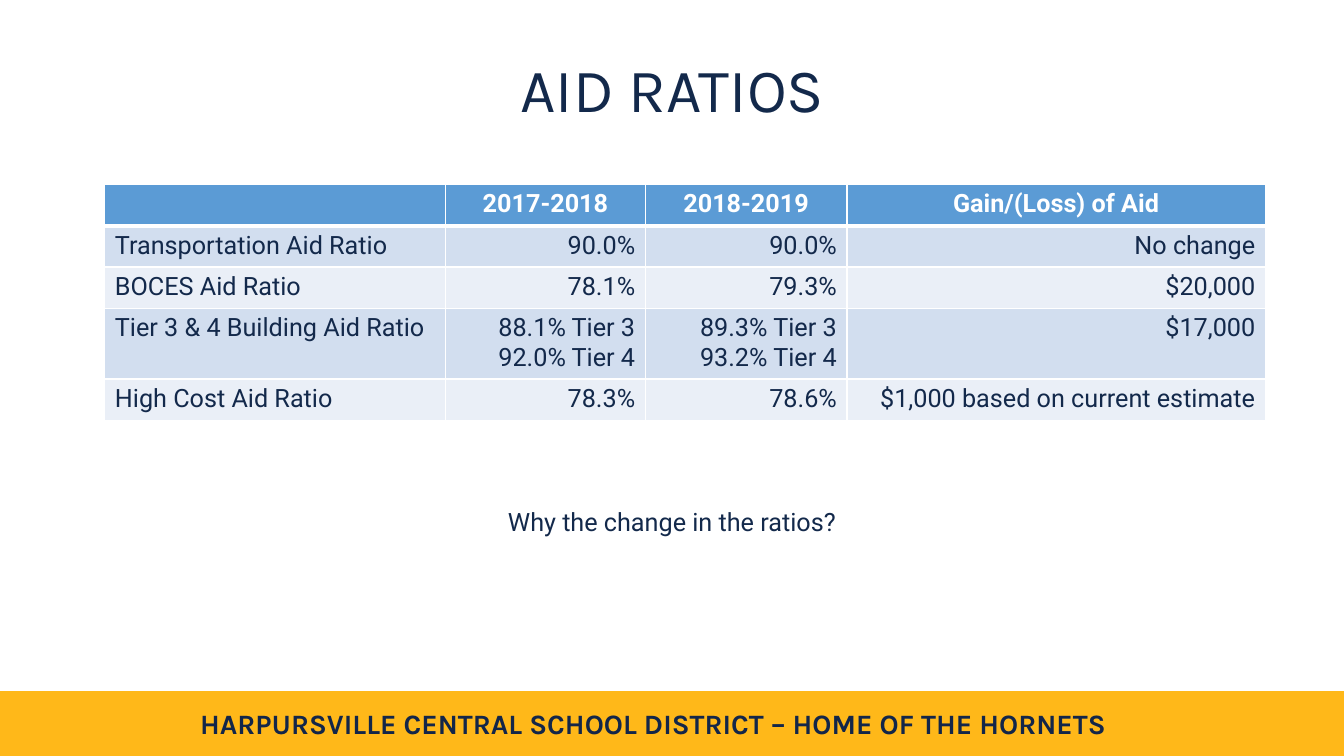
from pptx import Presentation
from pptx.dml.color import RGBColor
from pptx.enum.shapes import MSO_SHAPE
from pptx.enum.text import MSO_ANCHOR as ANCHOR, PP_ALIGN as ALIGN
from pptx.oxml import parse_xml
from pptx.oxml.ns import nsdecls
from pptx.util import Inches, Pt

TITLE = "AID RATIOS"
QUESTION = "Why the change in the ratios?"
FOOTER = "HARPURSVILLE CENTRAL SCHOOL DISTRICT – HOME OF THE HORNETS"
ROWS = [
    ("", "2017-2018", "2018-2019", "Gain/(Loss) of Aid"),
    ("Transportation Aid Ratio", "90.0%", "90.0%", "No change"),
    ("BOCES Aid Ratio", "78.1%", "79.3%", "$20,000"),
    ("Tier 3 & 4 Building Aid Ratio", "88.1% Tier 3\n92.0% Tier 4",
     "89.3% Tier 3\n93.2% Tier 4", "$17,000"),
    ("High Cost Aid Ratio", "78.3%", "78.6%", "$1,000 based on current estimate"),
]
COL_WIDTHS = (3.38, 1.98, 2, 4.15)
ROW_HEIGHTS = (0.41, 0.41, 0.41, 0.68, 0.41)
NAVY, FOOTER_NAVY, GOLD, WHITE = "13294B", "132649", "FFB819", "FFFFFF"
HEADER_BLUE, BANDS = "5B9BD5", ("EAEFF7", "D2DEEF")


def rgb(color):
    return RGBColor.from_string(color)


def write(tf, text, size, font, color, align, bold=False):
    tf.text = text
    for p in tf.paragraphs:
        p.alignment = align
        p.font.size = Pt(size)
        for r in p.runs:
            r.font.size = Pt(size)
            r.font.name = font
            r.font.bold = bold
            r.font.color.rgb = rgb(color)


def add_text(slide, box, *style):
    tf = slide.shapes.add_textbox(*map(Inches, box)).text_frame
    tf.word_wrap = True
    write(tf, *style)
    return tf


def set_borders(cell, bottom, top):
    widths = {"lnL": 1, "lnR": 1, "lnT": top, "lnB": bottom}
    tc_pr = cell._tc.get_or_add_tcPr()
    for i, (side, width) in enumerate(widths.items()):
        tc_pr.insert(i, parse_xml(
            f'<a:{side} {nsdecls("a")} w="{Pt(width)}"><a:solidFill>'
            f'<a:srgbClr val="{WHITE}"/></a:solidFill></a:{side}>'))


def add_ratio_table(slide):
    size = sum(COL_WIDTHS), sum(ROW_HEIGHTS)
    table = slide.shapes.add_table(len(ROWS), len(COL_WIDTHS), Inches(1.04), Inches(1.83),
                                   *map(Inches, size)).table
    for col, width in zip(table.columns, COL_WIDTHS):
        col.width = Inches(width)
    for i, row in enumerate(ROWS):
        table.rows[i].height = Inches(ROW_HEIGHTS[i])
        header = i == 0
        for j, text in enumerate(row):
            cell = table.cell(i, j)
            cell.fill.solid()
            cell.fill.fore_color.rgb = rgb(HEADER_BLUE if header else BANDS[i % 2])
            set_borders(cell, bottom=3 if header else 1, top=3 if i == 1 else 1)
            align = ALIGN.CENTER if header else ALIGN.RIGHT if j else ALIGN.LEFT
            write(cell.text_frame, text, 18, "Roboto", WHITE if header else NAVY, align, header)


prs = Presentation()
prs.slide_width, prs.slide_height = Inches(13.33), Inches(7.5)
slide = prs.slides.add_slide(prs.slide_layouts[6])

band = slide.shapes.add_shape(MSO_SHAPE.RECTANGLE, 0, Inches(6.86), prs.slide_width, Inches(0.63))
band.shadow.inherit = False
band.fill.solid()
band.fill.fore_color.rgb = rgb(GOLD)
band.line.color.rgb = rgb(GOLD)
band.line.width = Pt(1)

add_text(slide, (1.76, 6.96, 9.44, 0.44), FOOTER, 20, "Karla", FOOTER_NAVY, ALIGN.CENTER, True)
title = add_text(slide, (0.92, 0.4, 11.5, 1.04), TITLE, 44, "Karla", NAVY, ALIGN.CENTER)
title.vertical_anchor = ANCHOR.MIDDLE
title.paragraphs[0].line_spacing = 0.9
add_ratio_table(slide)
add_text(slide, (2.93, 4.97, 7.47, 0.4), QUESTION, 18, "Roboto", NAVY, ALIGN.CENTER)

prs.save("out.pptx")
